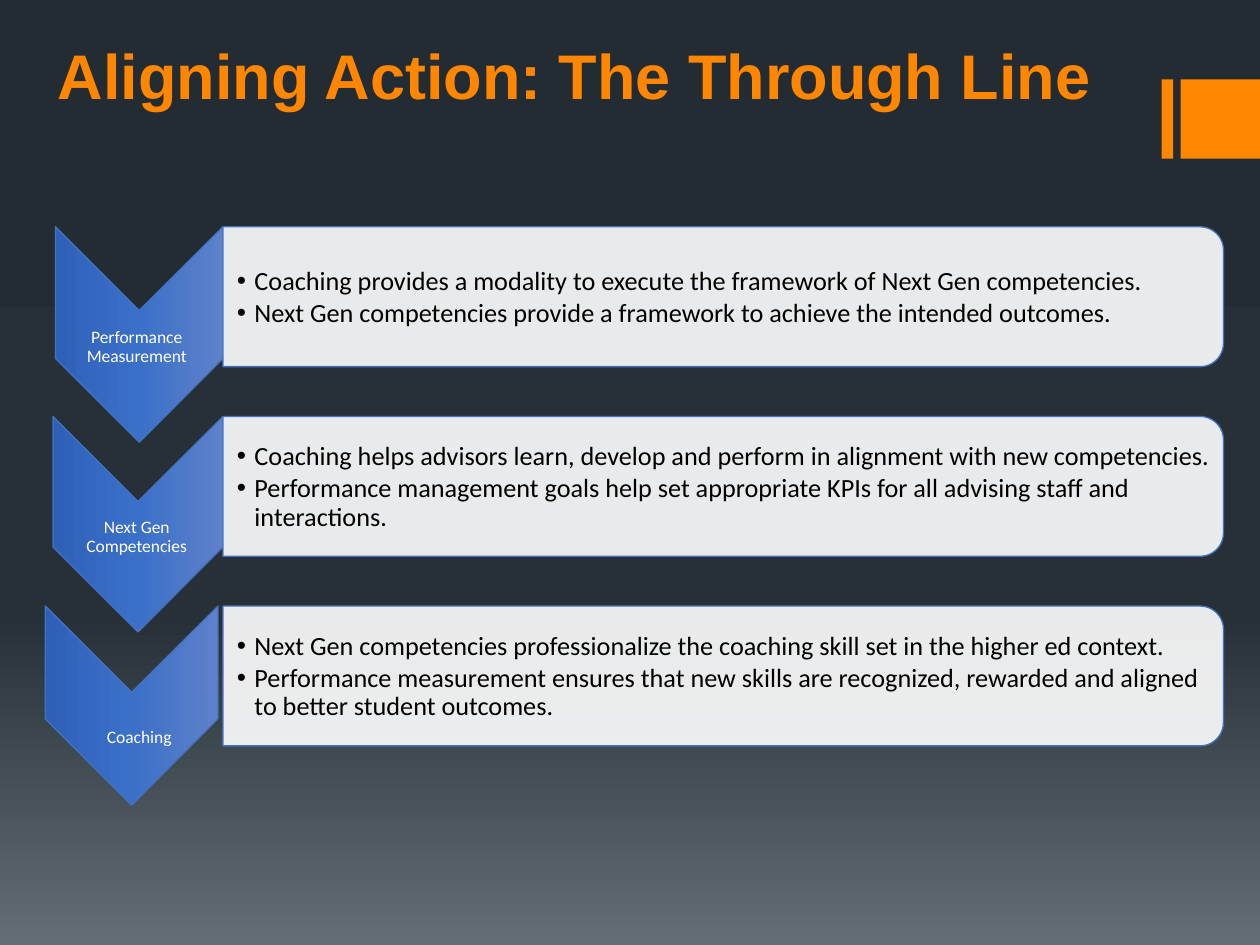
from lxml import etree
from pptx import Presentation
from pptx.dml.color import RGBColor
from pptx.enum import shapes, text
from pptx.oxml import ns
from pptx.util import Inches, Pt

ORANGE, BLUE, WHITE, BLACK = "FF8600", "4372C3", "FFFFFF", "000000"
color = RGBColor.from_string


def set_gradient(owner, fill, stops):
    """Give fill, found inside owner, a top-to-bottom gradient of (percent, hex) stops."""
    fill.gradient()
    grad = owner._element.xpath(".//a:gradFill")[0]
    for child in list(grad):
        grad.remove(child)
    stop_list = etree.SubElement(grad, ns.qn("a:gsLst"))
    for percent, tone in stops:
        stop = etree.SubElement(stop_list, ns.qn("a:gs"), pos=str(percent * 1000))
        etree.SubElement(stop, ns.qn("a:srgbClr"), val=tone)
    etree.SubElement(grad, ns.qn("a:lin"), ang="5400000", scaled="0")


def write(box, lines, size, tone, font="Calibri", bold=False, align=text.PP_ALIGN.LEFT,
          anchor=text.MSO_ANCHOR.MIDDLE, margins=(0, 0, 0, 0), spacing=0.9,
          bullet=False, wrap=True):
    frame = box.text_frame
    frame.word_wrap = wrap
    frame.vertical_anchor = anchor
    (frame.margin_left, frame.margin_top,
     frame.margin_right, frame.margin_bottom) = map(Inches, margins)
    for index, line in enumerate(lines):
        para = frame.add_paragraph() if index else frame.paragraphs[0]
        para.alignment = align
        para.line_spacing = spacing
        para.space_before = Pt(2 if index else 0)
        span = para.add_run()
        span.text = line
        span.font.name, span.font.size, span.font.bold = font, Pt(size), bold
        span.font.color.rgb = color(tone)
        if bullet:
            props = para._p.get_or_add_pPr()
            props.set("marL", str(Inches(0.14)))
            props.set("indent", str(Inches(-0.14)))
            bullet_color = etree.SubElement(props, ns.qn("a:buClr"))
            etree.SubElement(bullet_color, ns.qn("a:srgbClr"), val=tone)
            etree.SubElement(props, ns.qn("a:buFont"), typeface="Arial")
            etree.SubElement(props, ns.qn("a:buChar"), char="•")


deck = Presentation()
deck.slide_width, deck.slide_height = Inches(10), Inches(7.5)
page = deck.slides.add_slide(deck.slide_layouts[5])
set_gradient(page, page.background.fill, [(0, "242C33"), (65, "273037"), (100, "636D76")])

# Corner accent
for left, width in [(9.22, 0.09), (9.37, 0.63)]:
    accent = page.shapes.add_shape(shapes.MSO_SHAPE.RECTANGLE, Inches(left), Inches(0.63),
                                   Inches(width), Inches(0.63))
    accent.shadow.inherit = False
    accent.fill.solid()
    accent.fill.fore_color.rgb = color(ORANGE)
    accent.line.fill.background()

title = page.shapes.title
title.left, title.top, title.width, title.height = map(Inches, (0.36, 0.24, 8.49, 0.71))
write(title, ["Aligning Action: The Through Line"], 36, ORANGE, font="Arial", bold=True,
      anchor=text.MSO_ANCHOR.TOP, margins=(0.1, 0.05, 0.1, 0.05), spacing=1.0, wrap=False)

# Label, label box (left, top, width), chevron (left, width, height), bullets
rows = [
    ("Performance Measurement", (0.41, 2.5, 1.35), (0.44, 1.33, 1.71), [
        "Coaching provides a modality to execute the framework of Next Gen competencies.",
        "Next Gen competencies provide a framework to achieve the intended outcomes."]),
    ("Next Gen Competencies", (0.62, 4.01, 0.93), (0.42, 1.35, 1.71), [
        "Coaching helps advisors learn, develop and perform in alignment with new competencies.",
        "Performance management goals help set appropriate KPIs for all advising staff and "
        "interactions."]),
    ("Coaching", (0.64, 5.6, 0.93), (0.36, 1.37, 1.58), [
        "Next Gen competencies professionalize the coaching skill set in the higher ed context.",
        "Performance measurement ensures that new skills are recognized, rewarded and aligned "
        "to better student outcomes."]),
]
FIRST_TOP, ROW_STEP = 1.8, 1.505

for index, (label, label_place, chevron_place, bullets) in enumerate(rows):
    top = FIRST_TOP + index * ROW_STEP
    outlines = []
    for kind, (left, width, height) in [
            (shapes.MSO_SHAPE.CHEVRON, chevron_place),
            (shapes.MSO_SHAPE.ROUND_2_SAME_RECTANGLE, (1.77, 7.94, 1.11))]:
        # A quarter turn swaps width and height around the same centre
        shift = (width - height) / 2
        outline = page.shapes.add_shape(kind, Inches(left + shift), Inches(top - shift),
                                        Inches(height), Inches(width))
        outline.rotation = 90
        outline.shadow.inherit = False
        outline.line.color.rgb = color(BLUE)
        outline.line.width = Pt(0.75)
        outlines.append(outline)

    chevron, panel = outlines
    chevron.adjustments[0] = 0.5
    set_gradient(chevron, chevron.fill, [(0, "5E81C9"), (50, "3B70C9"), (100, "2E60B8")])
    panel.adjustments[0] = 0.167
    panel.fill.solid()
    panel.fill.fore_color.rgb = color(WHITE)
    panel_color = panel._element.spPr.find(ns.qn("a:solidFill"))[0]
    etree.SubElement(panel_color, ns.qn("a:alpha"), val="90000")

    label_box = page.shapes.add_textbox(*map(Inches, (*label_place, 0.51)))
    write(label_box, [label], 10, WHITE, align=text.PP_ALIGN.CENTER)
    bullet_box = page.shapes.add_textbox(Inches(1.77), Inches(top + 0.06),
                                         Inches(7.9), Inches(1.01))
    write(bullet_box, bullets, 15, BLACK, margins=(0.11, 0.01, 0.01, 0.01), bullet=True)

deck.save("out.pptx")
